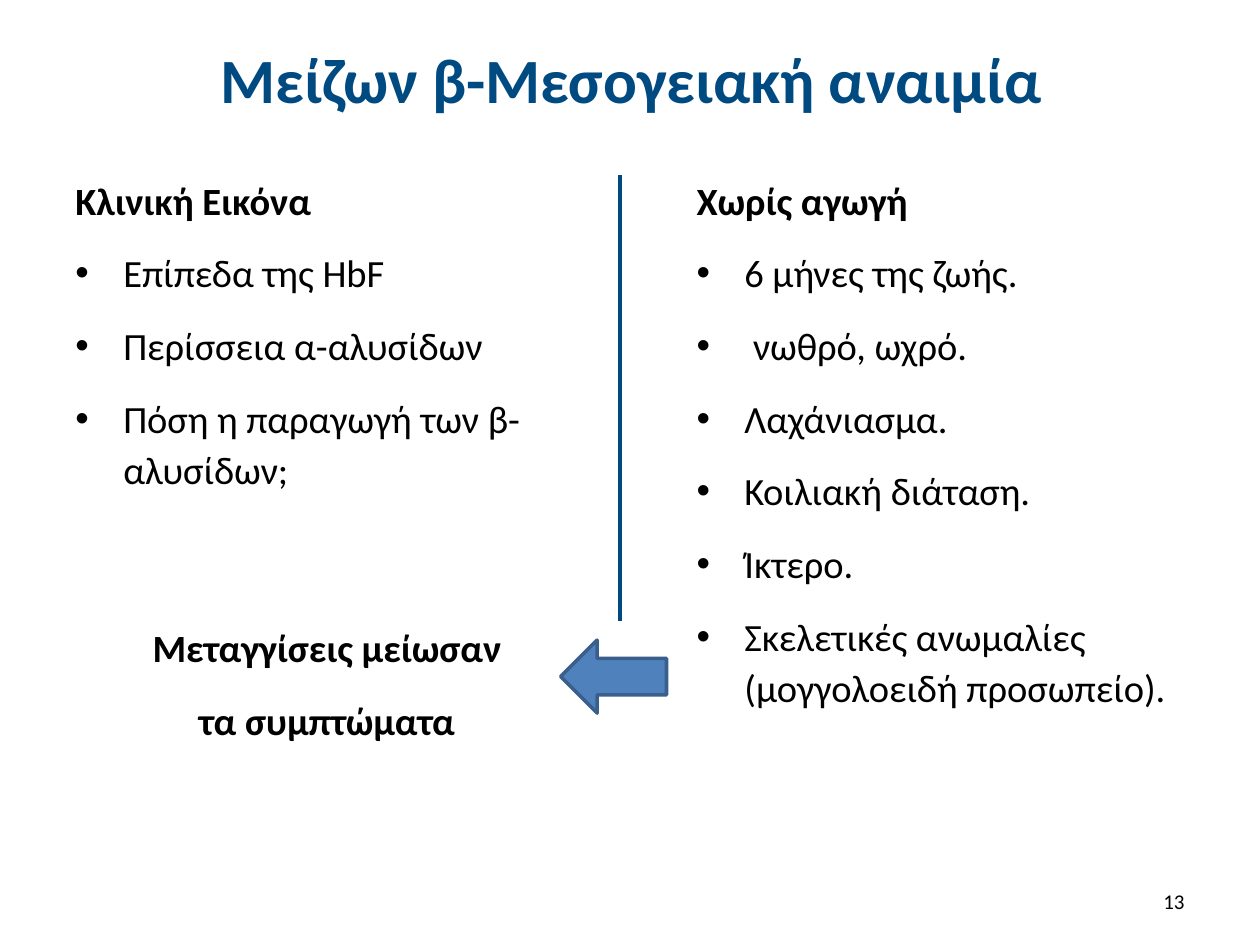
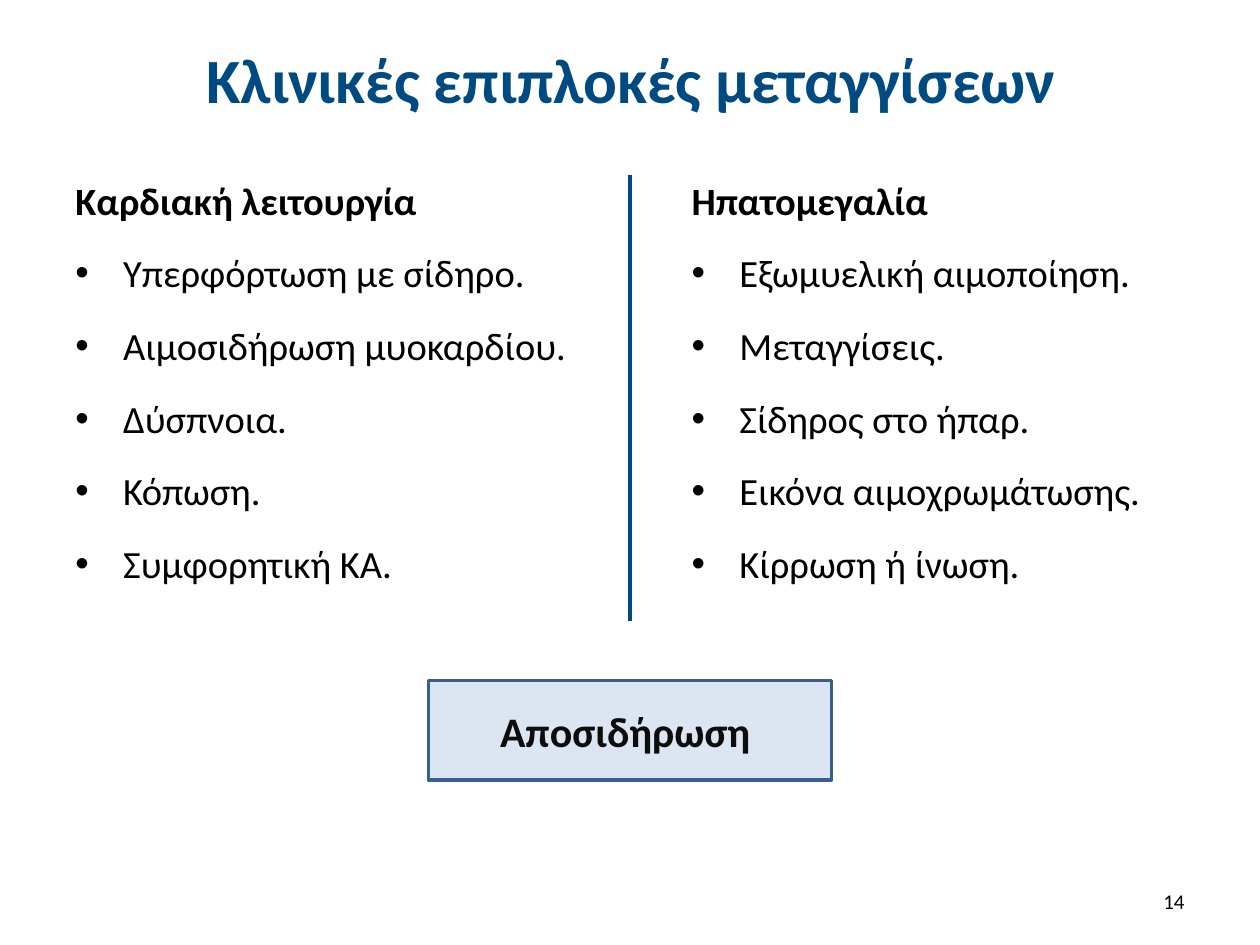
from lxml import etree
from pptx import Presentation
from pptx import util as u
from pptx.dml.color import RGBColor
from pptx.enum import shapes, text
from pptx.oxml.ns import qn

FONT = "Calibri"
COLORS = {"title": "004A82", "body": "000000", "arrow": "4F81BD",
          "outline": "3A5F8C", "panel": "DCE6F2", "panel_text": "0D0D0D"}
ALIGN = text.PP_ALIGN
COLUMN_TOP = 1.31
DIVIDER_TOP, DIVIDER_BOTTOM = 1.39, 4.93


def rgb(name):
    """Return the named palette colour."""
    return RGBColor.from_string(COLORS[name])


def write(p, content, size=22, color="body", bold=False, align=ALIGN.LEFT,
          bullet=False, line=None, before=0, after=0):
    """Fill a paragraph with one formatted run."""
    if bullet:
        pPr = p._p.get_or_add_pPr()
        pPr.set("marL", str(u.Inches(0.38)))
        pPr.set("indent", str(-u.Inches(0.38)))
        etree.SubElement(pPr, qn("a:buFont")).set("typeface", "Arial")
        etree.SubElement(pPr, qn("a:buChar")).set("char", "•")
    p.alignment = align
    p.space_before, p.space_after = u.Pt(before), u.Pt(after)
    if line:
        p.line_spacing = line
    r = p.add_run()
    r.text = content
    r.font.name, r.font.size, r.font.bold = FONT, u.Pt(size), bold
    r.font.color.rgb = rgb(color)


def add_box(s, box, anchor=text.MSO_ANCHOR.TOP):
    """Add a wrapping text box and return its text frame."""
    tf = s.shapes.add_textbox(*map(u.Inches, box)).text_frame
    tf.word_wrap = True
    tf.vertical_anchor = anchor
    return tf


def add_outlined(s, kind, box, fill):
    """Add a filled preset shape with the shared outline."""
    sp = s.shapes.add_shape(kind, *map(u.Inches, box))
    sp.shadow.inherit = False
    sp.fill.solid()
    sp.fill.fore_color.rgb = rgb(fill)
    sp.line.color.rgb = rgb("outline")
    sp.line.width = u.Pt(2)
    return sp


def add_column(s, left, width, height, heading, bullets, conclusion=()):
    """Write a heading, its bullets and an optional centred conclusion."""
    tf = add_box(s, (left, COLUMN_TOP, width, height))
    write(tf.paragraphs[0], heading, bold=True, line=1.12)
    for i, item in enumerate(bullets, 1):
        gap = 60 if conclusion and i == len(bullets) else 0
        write(tf.add_paragraph(), item, bullet=True, line=1.12, before=12, after=gap)
    for item in conclusion:
        write(tf.add_paragraph(), item, bold=True, align=ALIGN.CENTER,
              line=1.12, before=12)


def add_divider(s, x):
    """Draw the vertical rule between the columns."""
    line = s.shapes.add_connector(
        shapes.MSO_CONNECTOR.STRAIGHT,
        *map(u.Inches, (x, DIVIDER_TOP, x, DIVIDER_BOTTOM)))
    line.line.color.rgb = rgb("title")
    line.line.width = u.Pt(2.25)
    etree.SubElement(line._element.spPr, qn("a:effectLst"))


def add_slide(prs, title, number):
    """Add a blank slide with the shared title and page number."""
    s = prs.slides.add_slide(prs.slide_layouts[6])
    middle = text.MSO_ANCHOR.MIDDLE
    write(add_box(s, (0.51, 0.13, 9, 0.99), middle).paragraphs[0], title,
          size=36, color="title", bold=True, align=ALIGN.CENTER)
    write(add_box(s, (7.17, 6.95, 2.33, 0.4), middle).paragraphs[0], str(number),
          size=12, align=ALIGN.RIGHT)
    return s


def anemia_slide(prs):
    """Build the slide on major beta thalassemia."""
    s = add_slide(prs, "Μείζων β-Μεσογειακή αναιμία", 13)
    add_column(s, 0.5, 4.19, 5.51, "Κλινική Εικόνα",
               ["Επίπεδα της HbF", "Περίσσεια α-αλυσίδων",
                "Πόση η παραγωγή των β-αλυσίδων;"],
               ["Μεταγγίσεις μείωσαν", "τα συμπτώματα"])
    add_column(s, 5.43, 4.57, 5.51, "Χωρίς αγωγή",
               ["6 μήνες της ζωής.", " νωθρό, ωχρό.", "Λαχάνιασμα.",
                "Κοιλιακή διάταση.", "Ίκτερο.",
                "Σκελετικές ανωμαλίες (μογγολοειδή προσωπείο)."])
    add_outlined(s, shapes.MSO_SHAPE.LEFT_ARROW, (4.45, 5.08, 0.84, 0.58), "arrow")
    add_divider(s, 4.92)


def complications_slide(prs):
    """Build the slide on transfusion complications."""
    s = add_slide(prs, "Κλινικές επιπλοκές μεταγγίσεων", 14)
    add_column(s, 0.5, 4.5, 5.51, "Καρδιακή λειτουργία",
               ["Υπερφόρτωση με σίδηρο.", "Αιμοσιδήρωση μυοκαρδίου.",
                "Δύσπνοια.", "Κόπωση.", "Συμφορητική ΚΑ."])
    add_column(s, 5.39, 4.42, 4.44, "Ηπατομεγαλία",
               ["Εξωμυελική αιμοποίηση.", "Μεταγγίσεις.", "Σίδηρος στο ήπαρ.",
                "Εικόνα αιμοχρωμάτωσης.", "Κίρρωση ή ίνωση."])
    panel = add_outlined(s, shapes.MSO_SHAPE.RECTANGLE, (3.4, 5.4, 3.2, 0.79), "panel")
    panel.text_frame.vertical_anchor = text.MSO_ANCHOR.MIDDLE
    write(panel.text_frame.paragraphs[0], "Αποσιδήρωση ", size=24,
          color="panel_text", bold=True, align=ALIGN.CENTER)
    add_divider(s, 5)


def main():
    """Build and save the presentation."""
    prs = Presentation()
    prs.slide_width, prs.slide_height = u.Inches(10), u.Inches(7.5)
    anemia_slide(prs)
    complications_slide(prs)
    prs.save("out.pptx")


if __name__ == "__main__":
    main()
